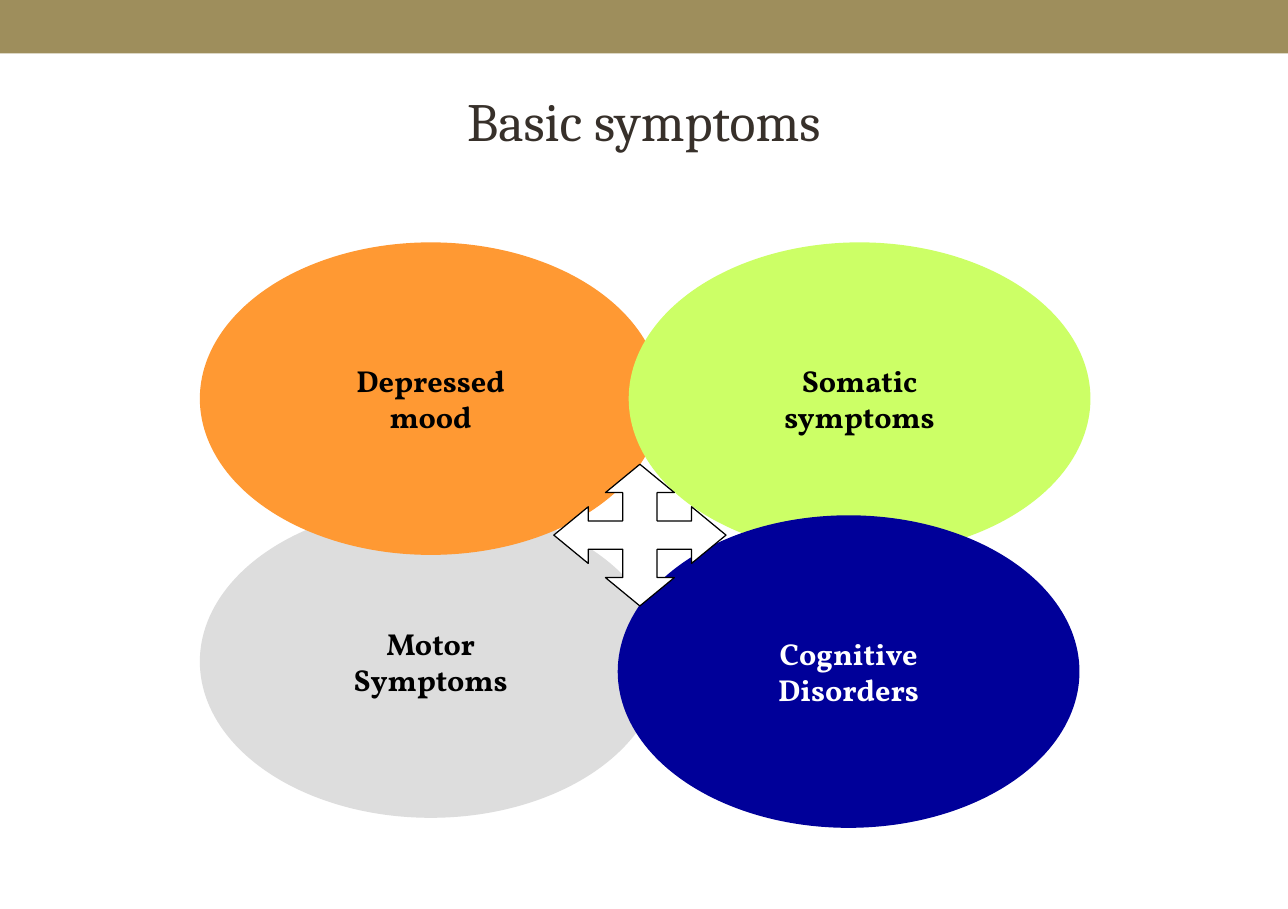
from pptx import Presentation
from pptx.dml.color import RGBColor
from pptx.enum import shapes, text
from pptx.util import Cm, Pt

SLIDE_W, SLIDE_H = 27.0, 19.05
OVAL_W, OVAL_H = 9.68, 6.55

# Left, top, fill, text colour and lines, from back to front
SYMPTOMS = [
    (4.19, 10.59, "DDDDDD", "000000", ("Motor", "Symptoms")),
    (4.19, 5.08, "FF9933", "000000", ("Depressed", "mood")),
    (13.18, 5.08, "CCFF66", "000000", ("Somatic", "symptoms")),
    (12.95, 10.8, "000099", "FFFFFF", ("Cognitive", "Disorders")),
]


def color(hex_string):
    return RGBColor.from_string(hex_string)


def paint(shape, fill, line=None):
    shape.shadow.inherit = False
    shape.fill.solid()
    shape.fill.fore_color.rgb = color(fill)
    if line:
        shape.line.color.rgb = color(line)
        shape.line.width = Pt(0.75)
    else:
        shape.line.fill.background()


def write(frame, lines, font, size, ink, bold=False):
    frame.vertical_anchor = text.MSO_ANCHOR.MIDDLE
    paragraph = frame.paragraphs[0]
    paragraph.alignment = text.PP_ALIGN.CENTER
    for index, line in enumerate(lines):
        if index:
            paragraph.add_line_break()
        run = paragraph.add_run()
        run.text = line
        run.font.name = font
        run.font.size = Pt(size)
        run.font.bold = bold
        run.font.color.rgb = color(ink)


def add_header(slide, left, top, width, height):
    # Band along the top edge
    band = slide.shapes.add_shape(
        shapes.MSO_SHAPE.RECTANGLE, Cm(left), Cm(top), Cm(width), Cm(1.12))
    paint(band, "9E8E5C")
    # Title
    title = slide.shapes.add_textbox(
        Cm(left + 1.35), Cm(top + 0.91), Cm(width - 2.7), Cm(height - 0.91))
    title.text_frame.word_wrap = True
    write(title.text_frame, ["Basic symptoms"], "Cambria", 32, "37302A")


def add_symptom(slide, left, top, fill, ink, lines):
    oval = slide.shapes.add_shape(
        shapes.MSO_SHAPE.OVAL, Cm(left), Cm(top), Cm(OVAL_W), Cm(OVAL_H))
    paint(oval, fill)
    oval.text_frame.word_wrap = False
    write(oval.text_frame, lines, "Vollkorn", 18, ink, bold=True)


def add_four_way_arrow(slide, left, top, width, height):
    # One arm on a 10 by 10 grid, turned by 90 degrees for the other three
    arm = [(5, 0), (3, 2), (4, 2), (4, 4), (2, 4), (2, 3)]
    outline = []
    for _ in range(4):
        outline += arm
        arm = [(y, 10 - x) for x, y in arm]
    builder = slide.shapes.build_freeform(
        *outline[0], scale=(Cm(width) / 10, Cm(height) / 10))
    builder.add_line_segments(outline[1:], close=True)
    paint(builder.convert_to_shape(Cm(left), Cm(top)), "FFFFFF", "000000")


def main():
    prs = Presentation()
    prs.slide_width, prs.slide_height = Cm(SLIDE_W), Cm(SLIDE_H)
    slide = prs.slides.add_slide(prs.slide_layouts[6])
    add_header(slide, 0, 0, SLIDE_W, 4.11)
    for symptom in SYMPTOMS:
        add_symptom(slide, *symptom)
    add_four_way_arrow(slide, 11.61, 9.73, 3.61, 2.97)
    prs.save("out.pptx")


if __name__ == "__main__":
    main()
